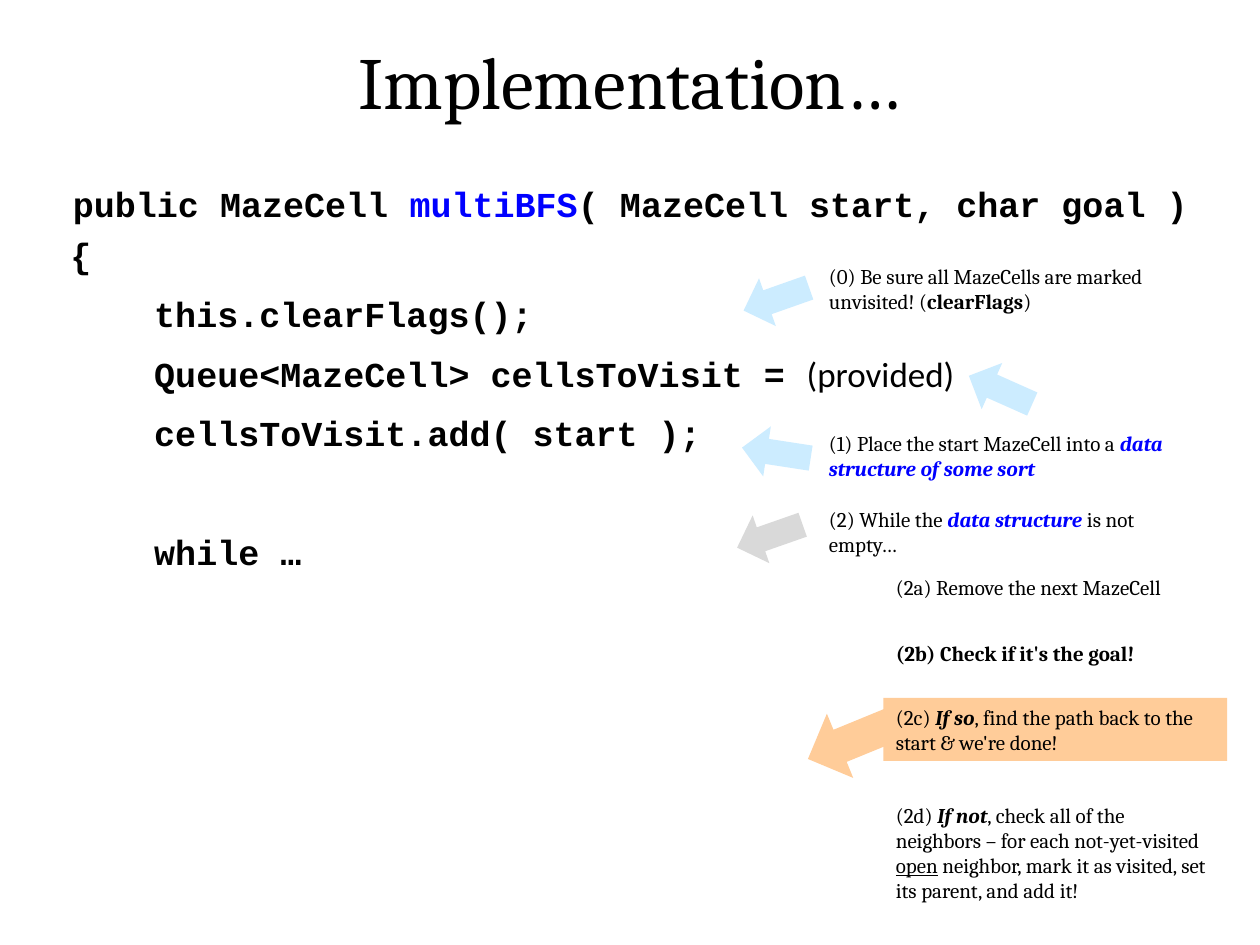
from pptx import Presentation
from pptx.dml.color import RGBColor
from pptx.enum.shapes import MSO_SHAPE
from pptx.enum.text import PP_ALIGN
from pptx.util import Cm, Pt

ARROW = MSO_SHAPE.DOWN_ARROW
RECT = MSO_SHAPE.RECTANGLE
CENTER = PP_ALIGN.CENTER

BLACK, BLUE = "000000", "0000FF"
SKY, GREY, PEACH = "CCECFF", "D9D9D9", "FFCC99"

TITLE = {"name": "Cambria", "size": Pt(42)}
NOTE = {"name": "Cambria", "size": Pt(12)}
CODE = {"name": "Courier New", "size": Pt(20), "bold": True}
PLAIN = {"name": "Calibri", "bold": False}
BOLD = {"bold": True}
SLANT = {"bold": True, "italic": True}
KEY = {**SLANT, "color": BLUE}
LINE = {"underline": True}

PITCH = Pt(34)
INDENT = Cm(1.69)
NOTE_X, STEP_X = 16.46, 17.81
STEP_W = 6.93

NOTES = [
    (NOTE_X, 5.18, 7.39, [
        ("(0) Be sure all MazeCells are marked unvisited! (", {}),
        ("clearFlags", BOLD), (")", {})]),
    (NOTE_X, 8.56, 7.39, [
        ("(1) Place the start MazeCell into a ", {}),
        ("data structure of some sort", KEY)]),
    (NOTE_X, 10.08, 6.96, [
        ("(2) While the ", {}), ("data structure ", KEY),
        ("is not empty…", {})]),
    (STEP_X, 11.46, STEP_W, [("(2a) Remove the next MazeCell", {})]),
    (STEP_X, 12.78, STEP_W, [("(2b) Check if it's the goal!", BOLD)]),
    (STEP_X, 16.05, STEP_W, [
        ("(2d) ", {}), ("If not", SLANT),
        (", check all of the neighbors – for each not-yet-visited ", {}),
        ("open", LINE),
        (" neighbor, mark it as visited, set its parent, and add it!", {})]),
]
GOAL = [
    ("(2c) ", {}), ("If so", SLANT),
    (", find the path back to the start & we're done!", {})]
HEAD = [
    ("public MazeCell ", {}), ("multiBFS", {"color": BLUE}),
    ("( MazeCell start, char goal )", {})]
BODY = [
    ([("{", {})], 0, 0),
    ([("this.clearFlags();", {})], INDENT, 0),
    ([("Queue<MazeCell> cellsToVisit = ", {}), ("(provided)", PLAIN)],
     INDENT, 0),
    ([("cellsToVisit.add( start );", {})], INDENT, 0),
    ([("while …", {})], INDENT, PITCH),
]
ARROWS = [
    (19.66, 7.16, 114, SKY),
    (15.14, 5.33, 70.6, SKY),
    (15.14, 8.43, 98.7, SKY),
    (15.01, 10.11, 70.7, GREY),
]


def rgb(code):
    return RGBColor.from_string(code)


def write(para, runs, base):
    for text, style in runs:
        run = para.add_run()
        run.text = text
        values = {"color": BLACK, **base, **style}
        run.font.color.rgb = rgb(values.pop("color"))
        for key, value in values.items():
            setattr(run.font, key, value)


def label(slide, x, y, w, h, runs, base, align=None):
    frame = slide.shapes.add_textbox(Cm(x), Cm(y), Cm(w), Cm(h)).text_frame
    frame.word_wrap = True
    para = frame.paragraphs[0]
    para.alignment = align
    write(para, runs, base)


def block(slide, kind, x, y, w, h, fill, turn=0):
    shape = slide.shapes.add_shape(kind, Cm(x), Cm(y), Cm(w), Cm(h))
    shape.shadow.inherit = False
    shape.fill.solid()
    shape.fill.fore_color.rgb = rgb(fill)
    shape.line.fill.background()
    shape.rotation = turn
    return shape


def listing(slide, x, y, w, h):
    frame = slide.shapes.add_textbox(Cm(x), Cm(y), Cm(w), Cm(h)).text_frame
    frame.word_wrap = True
    for i, (runs, indent, gap) in enumerate(BODY):
        para = frame.add_paragraph() if i else frame.paragraphs[0]
        para.line_spacing = PITCH
        para.space_before = gap
        para._p.get_or_add_pPr().set("marL", str(int(indent)))
        write(para, runs, CODE)


def main():
    deck = Presentation()
    deck.slide_width, deck.slide_height = Cm(25.4), Cm(19.05)
    slide = deck.slides.add_slide(deck.slide_layouts[6])

    block(slide, ARROW, 16.48, 13.97, 1.4, 1.93, PEACH, 67.7)
    label(slide, 1.57, 0.61, 22.25, 2.06, [("Implementation…", {})],
          TITLE, CENTER)
    for x, y, w, runs in NOTES:
        label(slide, x, y, w, 0.76, runs, NOTE)

    goal = block(slide, RECT, STEP_X, 14.07, STEP_W, 1.27, PEACH)
    goal.text_frame.word_wrap = True
    para = goal.text_frame.paragraphs[0]
    para.alignment = PP_ALIGN.LEFT
    write(para, GOAL, NOTE)

    label(slide, 1.22, 3.56, 23.37, 1.12, HEAD, CODE)
    listing(slide, 1.17, 4.23, 18.5, 7.9)
    for x, y, turn, fill in ARROWS:
        block(slide, ARROW, x, y, 1.02, 1.4, fill, turn)

    deck.save("out.pptx")


if __name__ == "__main__":
    main()
